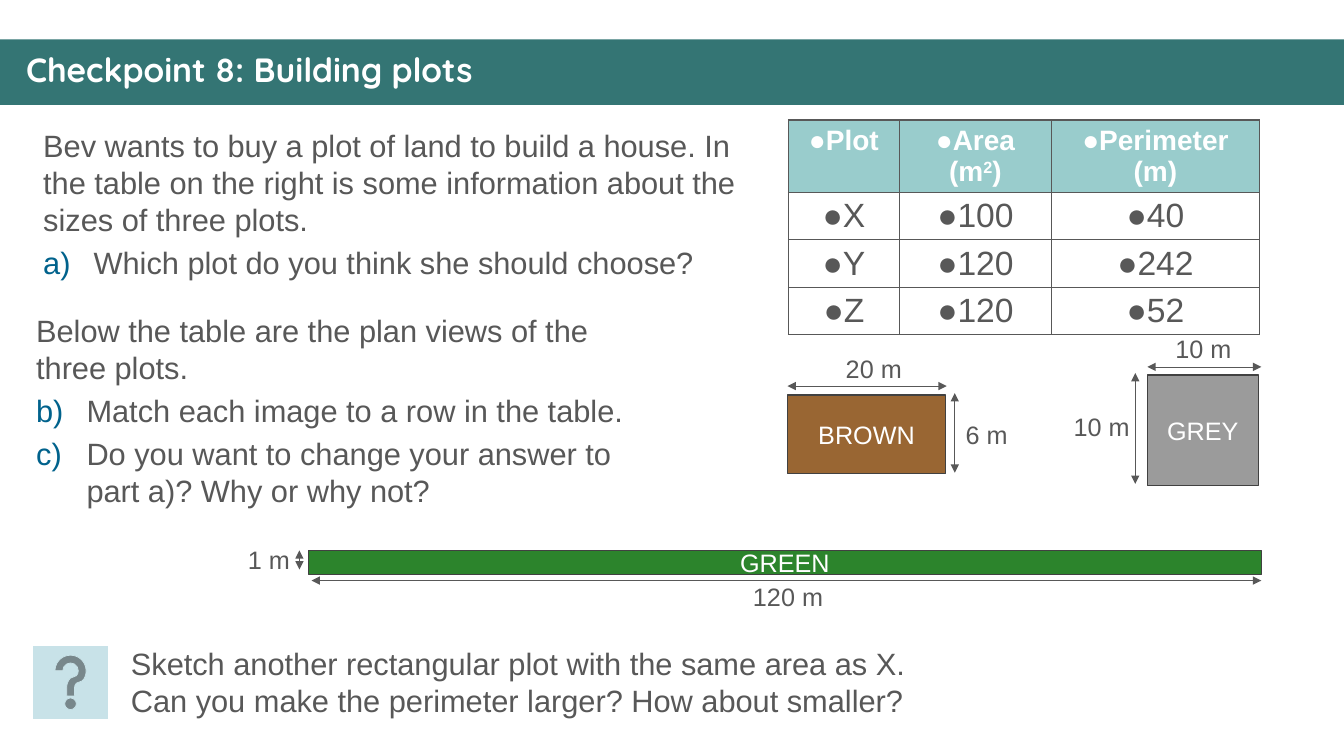
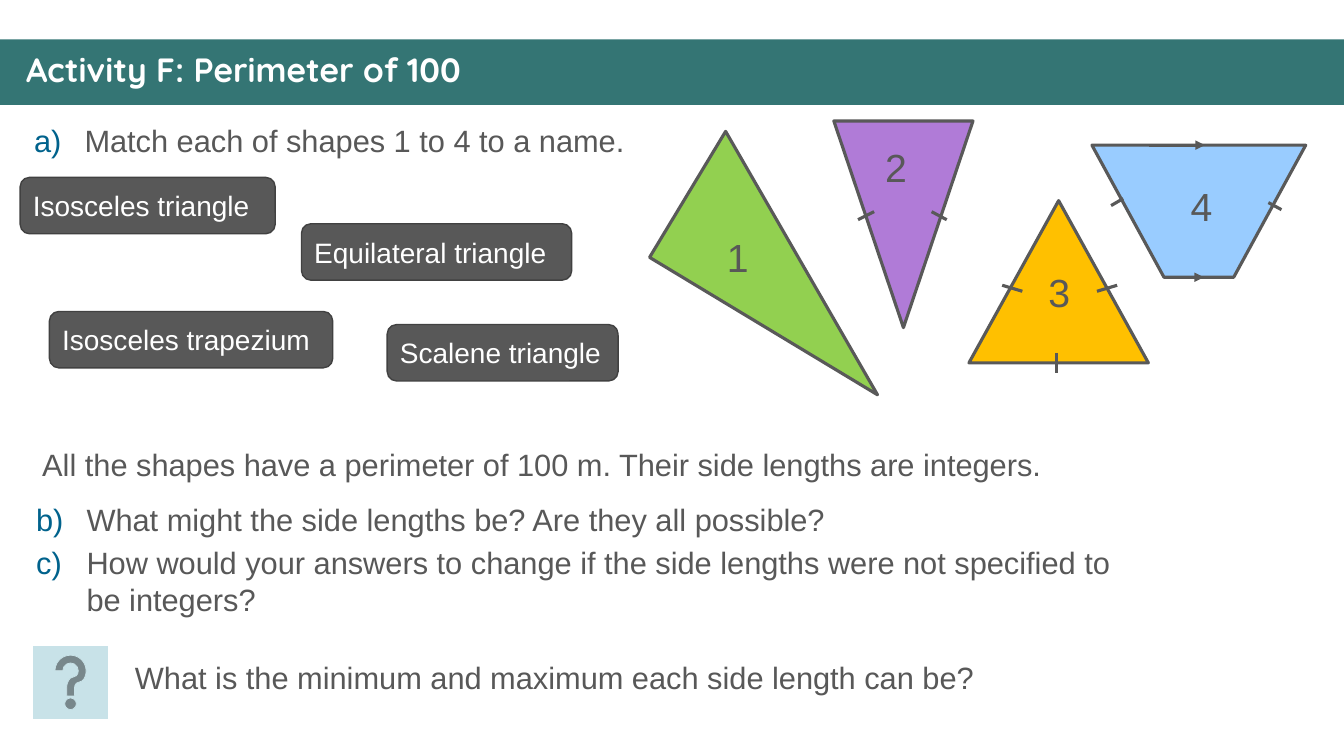
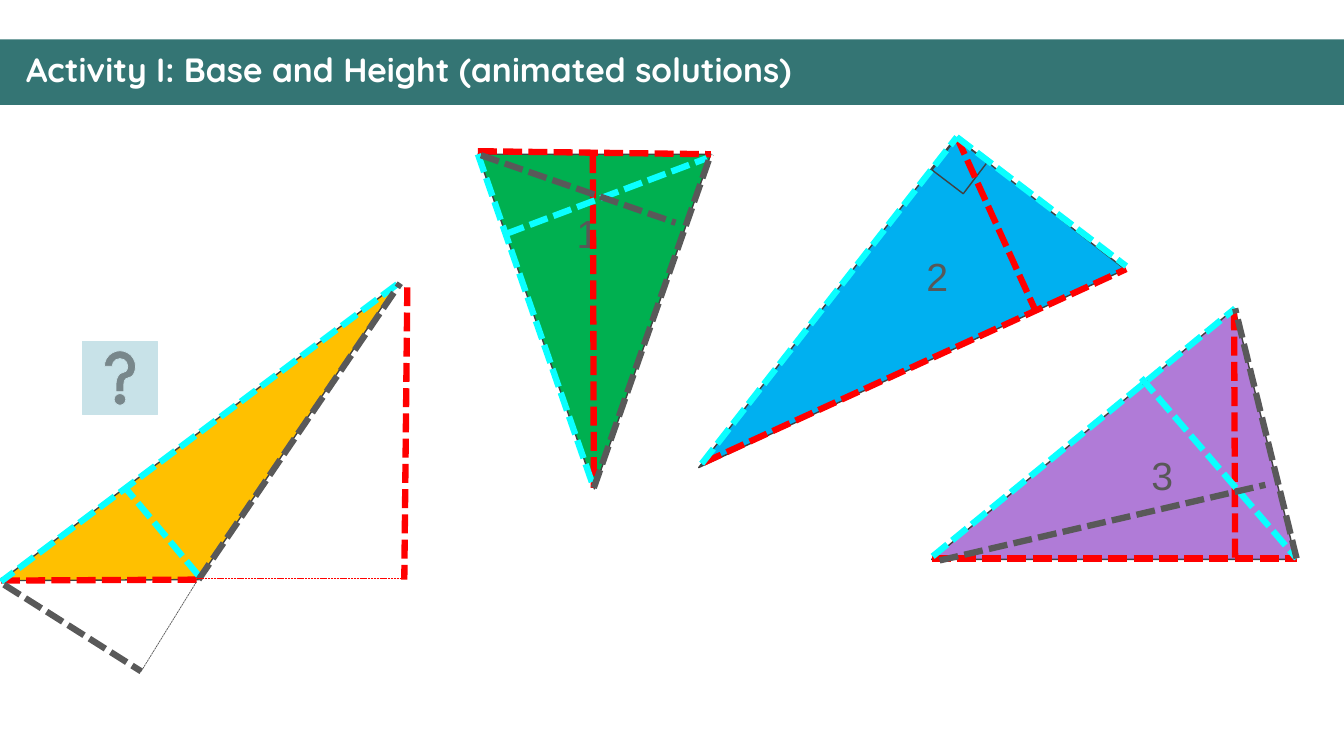
from dataclasses import dataclass

from lxml import etree
from pptx import Presentation
from pptx.dml.color import RGBColor
from pptx.enum.dml import MSO_LINE
from pptx.enum.shapes import MSO_CONNECTOR, MSO_SHAPE
from pptx.enum.text import MSO_ANCHOR, PP_ALIGN
from pptx.oxml.ns import qn
from pptx.util import Inches, Pt

LEFT, CENTER = PP_ALIGN.LEFT, PP_ALIGN.CENTER
TOP, MIDDLE = MSO_ANCHOR.TOP, MSO_ANCHOR.MIDDLE
RECT, ROUNDED = MSO_SHAPE.RECTANGLE, MSO_SHAPE.ROUNDED_RECTANGLE
TRIANGLE, RIGHT_TRIANGLE = MSO_SHAPE.ISOSCELES_TRIANGLE, MSO_SHAPE.RIGHT_TRIANGLE
TRAPEZOID, HELP = MSO_SHAPE.TRAPEZOID, MSO_SHAPE.ACTION_BUTTON_HELP
STRAIGHT, DASH = MSO_CONNECTOR.STRAIGHT, MSO_LINE.SQUARE_DOT


@dataclass(frozen=True)
class Theme:
    # Colours
    band: str = "347574"
    white: str = "FFFFFF"
    ink: str = "585858"
    outline: str = "414141"
    tick: str = "595959"
    letter: str = "00628C"
    header: str = "99CCCC"
    help: str = "C8E2E8"
    brown: str = "996633"
    grey: str = "9B9B9B"
    green: str = "2C842C"
    lime: str = "92D050"
    emerald: str = "00B050"
    purple: str = "B07BD7"
    amber: str = "FFC000"
    sky: str = "99CCFF"
    blue: str = "00B0F0"
    red: str = "FF0000"
    cyan: str = "0AFFFF"
    # Fonts and type sizes
    title_font: str = "Quicksand"
    body_font: str = "Arial"
    title: int = 24
    body: int = 22
    name: int = 20
    measure: int = 18
    number: int = 28


THEME = Theme()


def rgb(color):
    return RGBColor.from_string(color)


def add_bullet(paragraph, start=None, symbol=None):
    """Letter the paragraph from start, or give it a symbol."""
    props = paragraph._p.get_or_add_pPr()
    if symbol:
        props.set("marL", "0")
        props.set("indent", "0")
        etree.SubElement(props, qn("a:buFont"), typeface=THEME.body_font)
        etree.SubElement(props, qn("a:buChar"), char=symbol)
        return
    props.set("marL", str(Inches(0.5)))
    props.set("indent", str(-Inches(0.5)))
    tint = etree.SubElement(props, qn("a:buClr"))
    etree.SubElement(tint, qn("a:srgbClr"), val=THEME.letter)
    etree.SubElement(props, qn("a:buFont"), typeface="+mj-lt")
    etree.SubElement(props, qn("a:buAutoNum"), type="alphaLcParenR", startAt=str(start))


def write(frame, *plain, items=(), start=1, symbol=None, size=THEME.body, color=THEME.ink,
          font=THEME.body_font, bold=False, align=LEFT, spacing=None):
    """Write plain paragraphs, then lettered items; ^ surrounds a superscript."""
    for index, line in enumerate([*plain, *items]):
        paragraph = frame.add_paragraph() if index else frame.paragraphs[0]
        paragraph.alignment = align
        if index:
            paragraph.space_before = Pt(size * 0.2)
        if spacing:
            paragraph.line_spacing = spacing
        if symbol or index >= len(plain):
            add_bullet(paragraph, start, symbol)
        for part, piece in enumerate(line.split("^")):
            run = paragraph.add_run()
            run.text = piece
            run.font.size, run.font.bold, run.font.name = Pt(size), bold, font
            run.font.color.rgb = rgb(color)
            if part % 2:
                run.font._element.set("baseline", "30000")


class Deck:
    def __init__(self, theme):
        self.theme = theme
        self.file = Presentation()
        self.file.slide_width, self.file.slide_height = Inches(13.33), Inches(7.5)
        self.slide = None

    def new_slide(self, title):
        self.slide = self.file.slides.add_slide(self.file.slide_layouts[6])
        self.shape(RECT, 0, 0.39, 13.33, 0.65, self.theme.band)
        self.text(0.16, 0.48, 13.04, 0.47, title, size=self.theme.title, bold=True,
                  font=self.theme.title_font, color=self.theme.white, spacing=0.9)

    def text(self, x, y, w, h, *plain, wrap=True, **style):
        box = self.slide.shapes.add_textbox(Inches(x), Inches(y), Inches(w), Inches(h))
        box.text_frame.word_wrap = wrap
        write(box.text_frame, *plain, **style)

    def paint(self, shape, fill, line, width):
        shape.shadow.inherit = False
        if fill:
            shape.fill.solid()
            shape.fill.fore_color.rgb = rgb(fill)
        else:
            shape.fill.background()
        if line:
            shape.line.color.rgb, shape.line.width = rgb(line), Pt(width)
        else:
            shape.line.fill.background()

    def shape(self, kind, x, y, w, h, fill=None, line=None, width=1, turn=0, adjust=None,
              label=None, **style):
        shape = self.slide.shapes.add_shape(kind, Inches(x), Inches(y), Inches(w), Inches(h))
        self.paint(shape, fill, line, width)
        shape.rotation = turn
        if adjust is not None:
            shape.adjustments[0] = adjust
        if label:
            shape.text_frame.word_wrap = True
            shape.text_frame.vertical_anchor = MIDDLE
            write(shape.text_frame, label, color=self.theme.white, **style)

    def polygon(self, points, fill, line):
        corners = [(Inches(x), Inches(y)) for x, y in points]
        builder = self.slide.shapes.build_freeform(*corners[0])
        builder.add_line_segments(corners[1:], close=True)
        self.paint(builder.convert_to_shape(), fill, line, 1)

    def line(self, x1, y1, x2, y2, color, width, dash=None, arrows=()):
        line = self.slide.shapes.add_connector(
            STRAIGHT, Inches(x1), Inches(y1), Inches(x2), Inches(y2))
        line.line.color.rgb, line.line.width = rgb(color), Pt(width)
        if dash:
            line.line.dash_style = dash
        for end in arrows:
            etree.SubElement(line.line._get_or_add_ln(), qn(f"a:{end}"), type="triangle")
        etree.SubElement(line._element.spPr, qn("a:effectLst"))

    def dimension(self, *ends):
        self.line(*ends, self.theme.ink, 0.5, arrows=("headEnd", "tailEnd"))

    def tick(self, *ends):
        self.line(*ends, self.theme.tick, 2.25)

    def measure(self, x, y, w, label):
        self.text(x, y, w, 0.4, label, wrap=False, size=self.theme.measure)

    def plot(self, x, y, w, h, fill, label):
        self.shape(RECT, x, y, w, h, fill, self.theme.outline, label=label,
                   size=self.theme.measure, align=CENTER)

    def number(self, x, y, label):
        self.text(x, y, 0.42, 0.57, label, wrap=False, size=self.theme.number)

    def help(self, x, y):
        self.shape(HELP, x, y, 0.74, 0.72, self.theme.help, self.theme.help, 0.5)

    def table(self, x, y, widths, heights, rows):
        table = self.slide.shapes.add_table(
            len(rows), len(widths), Inches(x), Inches(y),
            Inches(sum(widths)), Inches(sum(heights))).table
        table.first_row = table.horz_banding = False
        for column, width in zip(table.columns, widths):
            column.width = Inches(width)
        for row, height in zip(table.rows, heights):
            row.height = Inches(height)
        for r, row in enumerate(rows):
            for c, value in enumerate(row):
                self.cell(table.cell(r, c), value, header=r == 0)

    def cell(self, cell, value, header):
        props = cell._tc.get_or_add_tcPr()
        for side in "LRTB":
            border = etree.SubElement(props, qn(f"a:ln{side}"), w=str(Pt(1)))
            paint = etree.SubElement(border, qn("a:solidFill"))
            etree.SubElement(paint, qn("a:srgbClr"), val=self.theme.ink)
        if header:
            cell.fill.solid()
            cell.fill.fore_color.rgb = rgb(self.theme.header)
        else:
            cell.fill.background()
        cell.vertical_anchor = TOP if header else MIDDLE
        # Slim margins keep the rows at their set heights
        cell.margin_top = Inches(0.05 if header else 0.02)
        cell.margin_bottom = Inches(0 if header else 0.02)
        write(cell.text_frame, value, symbol="●", align=CENTER, bold=header,
              size=self.theme.name if header else self.theme.title,
              color=self.theme.white if header else self.theme.ink)


def building_plots(deck):
    deck.new_slide("Checkpoint 8: Building plots")
    deck.table(7.82, 1.19, [1.1, 1.51, 2.06], [0.72, 0.47, 0.47, 0.47], [
        ["Plot", "Area (m^2^)", "Perimeter (m)"],
        ["X", "100", "40"],
        ["Y", "120", "242"],
        ["Z", "120", "52"],
    ])

    # Questions
    deck.text(0.33, 1.21, 7.41, 1.66,
              "Bev wants to buy a plot of land to build a house. In the table on the right "
              "is some information about the sizes of three plots.",
              items=["Which plot do you think she should choose?"])
    deck.text(0.26, 3.04, 6.05, 2.1,
              "Below the table are the plan views of the three plots.",
              items=["Match each image to a row in the table.",
                     "Do you want to change your answer to part a)? Why or why not?"], start=2)

    # Plan views
    deck.plot(3.06, 5.46, 9.45, 0.24, THEME.green, "GREEN")
    deck.plot(11.38, 3.72, 1.1, 1.1, THEME.grey, "GREY")
    deck.plot(7.81, 3.92, 1.57, 0.78, THEME.brown, "BROWN")
    for ends in [(3.09, 5.76, 12.51, 5.76), (2.97, 5.46, 2.97, 5.65),
                 (11.38, 3.64, 12.51, 3.64), (11.26, 4.8, 11.26, 3.7),
                 (9.47, 4.69, 9.47, 3.9), (9.39, 3.83, 7.81, 3.83)]:
        deck.dimension(*ends)
    for x, y, w, length in [(7.37, 5.72, 0.9, "120 m"), (2.36, 5.35, 0.62, "1 m"),
                            (11.56, 3.26, 0.76, "10 m"), (10.55, 4.03, 0.76, "10 m"),
                            (8.29, 3.46, 0.76, "20 m"), (9.48, 4.11, 0.62, "6 m")]:
        deck.measure(x, y, w, length)

    # Further question
    deck.text(1.2, 6.35, 8.37, 0.84,
              "Sketch another rectangular plot with the same area as X. "
              "Can you make the perimeter larger? How about smaller?")
    deck.help(0.33, 6.41)


def perimeter_of_100(deck):
    deck.new_slide("Activity F: Perimeter of 100")

    # Questions
    deck.text(0.24, 1.16, 13.04, 0.47, items=["Match each of shapes 1 to 4 to a name."])
    deck.text(0.32, 4.37, 12.39, 0.47,
              "All the shapes have a perimeter of 100 m. Their side lengths are integers.")
    deck.text(0.26, 4.92, 11.01, 1.29, start=2, items=[
        "What might the side lengths be? Are they all possible?",
        "How would your answers to change if the side lengths were not specified to be integers?"])
    deck.text(1.24, 6.49, 9.02, 0.92,
              "What is the minimum and maximum each side length can be?")
    deck.help(0.33, 6.41)

    # Names to match
    for x, y, w, name in [(0.2, 1.76, 2.53, "Isosceles triangle"),
                          (3.84, 3.22, 2.29, "Scalene triangle"),
                          (2.99, 2.22, 2.68, "Equilateral triangle"),
                          (0.49, 3.09, 2.81, "Isosceles trapezium")]:
        deck.shape(ROUNDED, x, y, w, 0.56, THEME.ink, THEME.outline, label=name, size=THEME.name)

    # Shapes 1 to 4
    for kind, x, y, w, h, fill, turn, adjust in [
            (RIGHT_TRIANGLE, 6.63, 1.88, 2.64, 1.46, THEME.lime, 31.1, None),
            (TRIANGLE, 8.27, 1.2, 1.38, 2.05, THEME.purple, 180, None),
            (TRIANGLE, 9.61, 1.99, 1.78, 1.61, THEME.amber, 0, None),
            (TRAPEZOID, 10.83, 1.44, 2.12, 1.31, THEME.sky, 180, 0.545)]:
        deck.shape(kind, x, y, w, h, fill, THEME.tick, 2.25, turn, adjust)

    # Marks for equal and parallel sides
    for ends in [(9.39, 2.18, 9.24, 2.1), (8.51, 2.18, 8.67, 2.1),
                 (9.94, 2.83, 10.14, 2.89), (11.08, 2.83, 10.88, 2.89),
                 (10.48, 3.5, 10.48, 3.7),
                 (11.02, 2.04, 11.14, 1.97), (12.71, 2.08, 12.58, 2.01)]:
        deck.tick(*ends)
    for ends in [(11.4, 1.44, 11.95, 1.44), (11.58, 2.75, 11.94, 2.75)]:
        deck.line(*ends, THEME.ink, 2.25, arrows=["tailEnd"])
    for x, y, label in [(7.11, 2.27, "1"), (8.68, 1.37, "2"), (10.3, 2.61, "3"), (11.71, 1.76, "4")]:
        deck.number(x, y, label)


def base_and_height(deck):
    deck.new_slide("Activity I: Base and Height (animated solutions)")

    # Triangles
    deck.shape(RIGHT_TRIANGLE, 6.97, 2.59, 4.15, 2.13, THEME.blue, THEME.outline, turn=127.9)
    deck.shape(RECT, 9.32, 1.45, 0.4, 0.39, line=THEME.outline, turn=307.3)
    deck.help(0.82, 3.39)
    deck.shape(TRIANGLE, 9.24, 3.06, 3.61, 2.49, THEME.purple, THEME.outline, adjust=0.833)
    deck.shape(TRIANGLE, 4.74, 1.53, 2.31, 3.32, THEME.emerald, THEME.outline, turn=180)
    deck.polygon([(0.01, 5.76), (3.94, 2.82), (1.97, 5.75)], THEME.amber, THEME.outline)
    for x, y, label in [(5.62, 2.03, "1"), (9.09, 2.45, "2"), (11.32, 4.43, "3")]:
        deck.number(x, y, label)

    # Each colour pairs a base with its height
    pairs = {
        THEME.red: [
            (4.74, 1.5, 7.05, 1.53), (5.88, 1.53, 5.89, 4.84),
            (9.49, 1.36, 10.26, 3.06), (6.98, 4.59, 11.17, 2.67),
            (9.24, 5.54, 12.86, 5.54), (12.24, 3.09, 12.25, 5.54),
            (0.01, 5.76, 1.97, 5.75), (4.04, 2.85, 4.01, 5.75)],
        THEME.cyan: [
            (5.02, 2.32, 7.01, 1.57), (4.74, 1.53, 5.89, 4.84),
            (9.49, 1.36, 11.17, 2.64), (6.96, 4.6, 9.49, 1.36),
            (11.32, 3.75, 12.86, 5.54), (9.25, 5.52, 12.25, 3.06),
            (1.97, 5.71, 1.26, 4.86), (3.94, 2.82, 0.01, 5.77)],
        THEME.tick: [
            (5.89, 4.84, 7.05, 1.53), (4.77, 1.54, 6.7, 2.21),
            (12.86, 5.54, 12.25, 3.06), (9.32, 5.56, 12.55, 4.81),
            (1.97, 5.75, 3.97, 2.81), (0.04, 5.8, 1.4, 6.66)],
    }
    for color, segments in pairs.items():
        for ends in segments:
            deck.line(*ends, color, 4.5, DASH)

    # Extended bases
    deck.line(1.95, 5.74, 4.02, 5.74, THEME.red, 0.5, DASH)
    deck.line(1.4, 6.66, 1.95, 5.77, THEME.tick, 0.5, DASH)


def main():
    deck = Deck(THEME)
    building_plots(deck)
    perimeter_of_100(deck)
    base_and_height(deck)
    deck.file.save("out.pptx")


if __name__ == "__main__":
    main()
